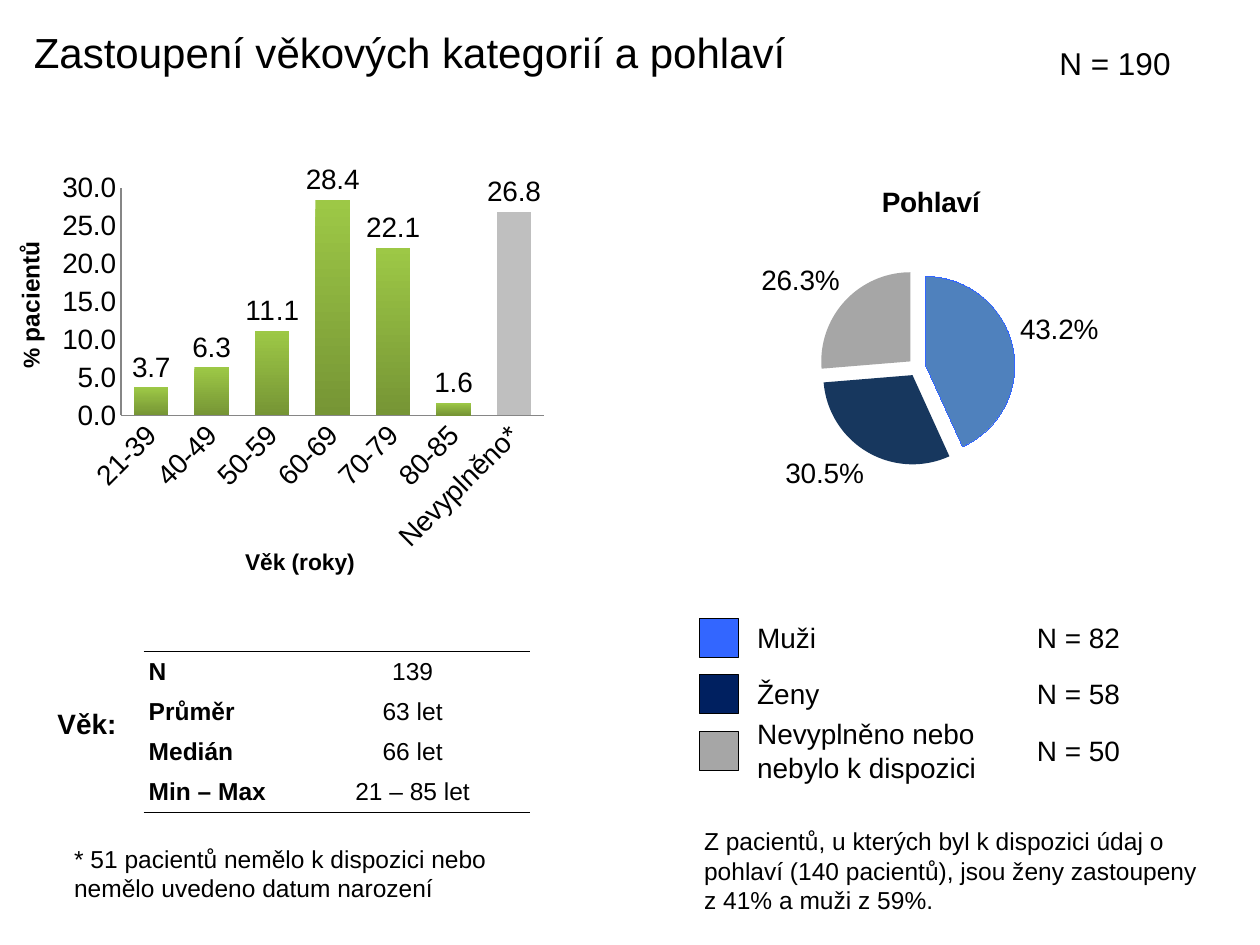
from dataclasses import dataclass

from lxml.etree import SubElement
from pptx import Presentation
from pptx.chart.data import CategoryChartData
from pptx.dml.color import RGBColor
from pptx.enum.chart import XL_CHART_TYPE, XL_LABEL_POSITION, XL_TICK_MARK
from pptx.enum.shapes import MSO_SHAPE
from pptx.enum.text import MSO_ANCHOR, MSO_AUTO_SIZE, PP_ALIGN
from pptx.oxml import parse_xml
from pptx.oxml.ns import nsdecls, qn
from pptx.util import Inches, Pt

FONT = "Arial"
PLAIN_TABLE_STYLE = "{2D5ABB26-0587-4C30-8999-92F81FD0307C}"
COLORS = {
    "text": "000000", "axis": "868686", "bar_top": "9DC846", "bar_bottom": "769535",
    "missing_bar": "BFBFBF", "men_slice": "4F81BD", "women_slice": "17375E",
    "missing": "A6A6A6", "men": "3366FF", "women": "002060",
}


@dataclass
class Label:
    text: str
    left: float
    top: float
    width: float
    height: float
    size: float
    bold: bool = False
    align: PP_ALIGN = PP_ALIGN.LEFT
    anchor: MSO_ANCHOR = MSO_ANCHOR.TOP
    grow: bool = True
    wrap: bool = True
    rotation: float = 0


@dataclass
class SexGroup:
    name: str
    count: str
    color: str


LABELS = [
    Label("Zastoupení věkových kategorií a pohlaví", 0.17, 0.16, 9.14, 0.55, 24, grow=False),
    Label("N = 190", 8.31, 0.3, 1.3, 0.4, 18),
    Label("* 51 pacientů nemělo k dispozici nebo nemělo uvedeno datum narození",
          0.49, 6.65, 4.04, 0.57, 14),
    Label("Věk (roky)", 1.3, 4.3, 2.16, 0.32, 13, True, PP_ALIGN.CENTER),
    Label("Věk:", 0.35, 5.56, 0.68, 0.37, 16, True, PP_ALIGN.CENTER, wrap=False),
    Label("Z pacientů, u kterých byl k dispozici údaj o pohlaví (140 pacientů), "
          "jsou ženy zastoupeny z 41% a muži z 59%.", 5.49, 6.51, 4.24, 0.81, 14),
]
PERCENT_LABEL = Label("% ", -0.63, 2.25, 1.74, 0.34, 13, True, PP_ALIGN.CENTER, rotation=269.8)
SEX_GROUPS = [
    SexGroup("Muži", "N = 82", "men"),
    SexGroup("Ženy", "N = 58", "women"),
    SexGroup("Nevyplněno nebo nebylo k dispozici", "N = 50", "missing"),
]
AGE_SHARES = {"21-39": 3.7, "40-49": 6.3, "50-59": 11.1, "60-69": 28.4,
              "70-79": 22.1, "80-85": 1.6, "Nevyplněno*": 26.8}
SEX_SHARES = {"1": 43.2, "2": 30.5, "3": 26.3}
AGE_STATISTICS = [("N", "139"), ("Průměr", "63 let"), ("Medián", "66 let"),
                  ("Min – Max", "21 – 85 let")]


def rgb(name: str) -> RGBColor:
    return RGBColor.from_string(COLORS[name])


def style_font(font, size: float, bold: bool = False) -> None:
    font.name, font.size, font.bold = FONT, Pt(size), bold
    font.color.rgb = rgb("text")


def add_run(paragraph, text: str, size: float, bold: bool = False) -> None:
    run = paragraph.add_run()
    run.text = text
    style_font(run.font, size, bold)


def add_label(slide, label: Label):
    box = slide.shapes.add_textbox(Inches(label.left), Inches(label.top),
                                   Inches(label.width), Inches(label.height))
    box.rotation = label.rotation
    frame = box.text_frame
    frame.word_wrap = label.wrap
    frame.vertical_anchor = label.anchor
    frame.auto_size = MSO_AUTO_SIZE.SHAPE_TO_FIT_TEXT if label.grow else MSO_AUTO_SIZE.NONE
    paragraph = frame.paragraphs[0]
    paragraph.alignment = label.align
    add_run(paragraph, label.text, label.size, label.bold)
    return box


def add_sex_group(slide, group: SexGroup, middle: float) -> None:
    side = 0.31
    swatch = slide.shapes.add_shape(MSO_SHAPE.RECTANGLE, Inches(5.55), Inches(middle - side / 2),
                                    Inches(side), Inches(side))
    swatch.shadow.inherit = False
    swatch.fill.solid()
    swatch.fill.fore_color.rgb = rgb(group.color)
    swatch.line.color.rgb = rgb("text")
    swatch.line.width = Pt(0.5)
    for text, left, width in ((group.name, 5.93, 2.14), (group.count, 8.15, 1.1)):
        box = add_label(slide, Label(text, left, middle - 0.2, width, 0.39, 16,
                                     anchor=MSO_ANCHOR.MIDDLE, grow=False))
        frame = box.text_frame
        frame.margin_left = frame.margin_right = Inches(0.08)
        frame.margin_top = frame.margin_bottom = Inches(0.08)


def set_layout(parent, **fractions: float) -> None:
    for old in parent.findall(qn("c:layout")):
        parent.remove(old)
    target = '<c:layoutTarget val="inner"/>' if "w" in fractions else ""
    values = "".join(f'<c:{key} val="{value}"/>' for key, value in fractions.items())
    layout = parse_xml(
        f'<c:layout {nsdecls("c")}><c:manualLayout>{target}<c:xMode val="edge"/>'
        f'<c:yMode val="edge"/>{values}</c:manualLayout></c:layout>')
    text = parent.find(qn("c:tx"))
    parent.insert(0 if text is None else 1, layout)


def add_share_chart(slide, kind, shares: dict[str, float], left: float, top: float,
                    width: float, height: float):
    data = CategoryChartData()
    data.categories = list(shares)
    data.add_series("Series 1", list(shares.values()))
    chart = slide.shapes.add_chart(kind, Inches(left), Inches(top), Inches(width),
                                   Inches(height), data).chart
    chart.has_legend = False
    style_font(chart.font, 16)
    plot = chart.plots[0]
    plot.has_data_labels = True
    labels = plot.data_labels
    style_font(labels.font, 16)
    labels.number_format_is_linked = False
    labels.position = XL_LABEL_POSITION.OUTSIDE_END
    return chart


def add_age_chart(slide) -> None:
    chart = add_share_chart(slide, XL_CHART_TYPE.COLUMN_CLUSTERED, AGE_SHARES, 0.4, 1, 4, 4.1)
    chart.has_title = False
    plot = chart.plots[0]
    plot.gap_width = 75
    plot.vary_by_categories = False
    plot.data_labels.show_value = True
    plot.data_labels.number_format = "0.0"
    for axis in (chart.category_axis, chart.value_axis):
        axis.major_tick_mark = axis.minor_tick_mark = XL_TICK_MARK.NONE
        axis.has_major_gridlines = False
        axis.format.line.color.rgb = rgb("axis")
        axis.format.line.width = Pt(0.75)
        style_font(axis.tick_labels.font, 16)
    shares = chart.value_axis
    shares.minimum_scale, shares.maximum_scale, shares.major_unit = 0, 30, 5
    shares.tick_labels.number_format = "0.0"
    shares.tick_labels.number_format_is_linked = False
    chart._chartSpace.find(f".//{qn('c:catAx')}/{qn('c:txPr')}/{qn('a:bodyPr')}").set("rot", "-2700000")
    ages = plot.series[0]
    fill = ages.format.fill
    fill.gradient()
    fill.gradient_angle = 270
    for stop, name in zip(fill.gradient_stops, ("bar_top", "bar_bottom")):
        stop.color.rgb = rgb(name)
    missing = ages.points[6].format.fill
    missing.solid()
    missing.fore_color.rgb = rgb("missing_bar")
    set_layout(chart._chartSpace.chart.plotArea, x=0.14, y=0.12, w=0.84, h=0.44)


def add_sex_chart(slide) -> None:
    chart = add_share_chart(slide, XL_CHART_TYPE.PIE, SEX_SHARES, 5.08, 1.31, 4.58, 2.82)
    chart.has_title = True
    add_run(chart.chart_title.text_frame.paragraphs[0], "Pohlaví", 16, True)
    set_layout(chart._chartSpace.chart.find(qn("c:title")), x=0.41, y=0.04)
    plot = chart.plots[0]
    plot.vary_by_categories = True
    plot.data_labels.show_value = False
    plot.data_labels.show_percentage = True
    plot.data_labels.number_format = "0.0%"
    sexes = plot.series[0]
    for index, name in enumerate(("men_slice", "women_slice", "missing")):
        slice_format = sexes.points[index].format
        slice_format.fill.solid()
        slice_format.fill.fore_color.rgb = rgb(name)
    sexes.points[0].format.line.color.rgb = rgb("men")
    explosion = SubElement(sexes._element, qn("c:explosion"), val="10")
    sexes._element.find(qn("c:dPt")).addprevious(explosion)
    set_layout(chart._chartSpace.chart.plotArea, x=0.31, y=0.29, w=0.34, h=0.56)


def add_border(cell, side: str) -> None:
    border = parse_xml(
        f'<a:{side} {nsdecls("a")} w="12700"><a:solidFill>'
        f'<a:srgbClr val="{COLORS["text"]}"/></a:solidFill></a:{side}>')
    cell._tc.get_or_add_tcPr().insert(0, border)


def add_age_table(slide) -> None:
    row_height = 0.32
    table = slide.shapes.add_table(4, 2, Inches(1.14), Inches(5.17), Inches(3.07),
                                   Inches(4 * row_height)).table
    table.first_row = table.horz_banding = False
    table._tbl.tblPr.find(qn("a:tableStyleId")).text = PLAIN_TABLE_STYLE
    for column, width in zip(table.columns, (1.2, 1.87)):
        column.width = Inches(width)
    for row, statistic in enumerate(AGE_STATISTICS):
        table.rows[row].height = Inches(row_height)
        for column, text in enumerate(statistic):
            cell = table.cell(row, column)
            cell.fill.background()
            cell.vertical_anchor = MSO_ANCHOR.MIDDLE
            cell.margin_left = cell.margin_right = Inches(0.04)
            cell.margin_top = cell.margin_bottom = Inches(0.04)
            paragraph = cell.text_frame.paragraphs[0]
            paragraph.alignment = PP_ALIGN.CENTER if column else PP_ALIGN.LEFT
            add_run(paragraph, text, 14, bold=column == 0)
            if row == 0:
                add_border(cell, "lnT")
            elif row == len(AGE_STATISTICS) - 1:
                add_border(cell, "lnB")


def main() -> None:
    presentation = Presentation()
    presentation.slide_width, presentation.slide_height = Inches(10), Inches(7.5)
    slide = presentation.slides.add_slide(presentation.slide_layouts[6])
    add_age_chart(slide)
    add_sex_chart(slide)
    add_age_table(slide)
    for label in LABELS:
        add_label(slide, label)
    percent_box = add_label(slide, PERCENT_LABEL)
    add_run(percent_box.text_frame.paragraphs[0], "pacientů", 14, True)
    for index, group in enumerate(SEX_GROUPS):
        add_sex_group(slide, group, 5.06 + 0.45 * index)
    presentation.save("out.pptx")


if __name__ == "__main__":
    main()
